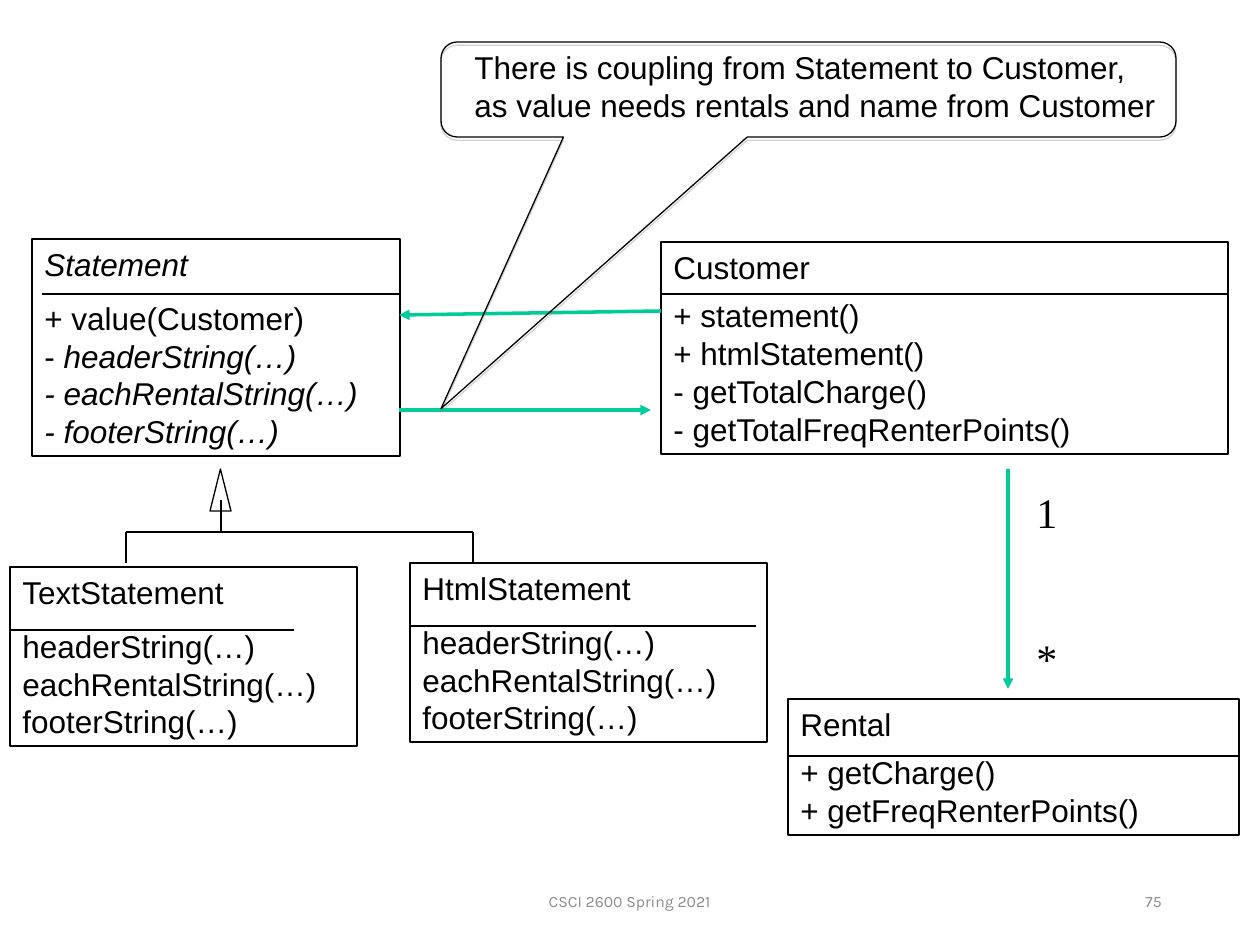
import pptx
import pptx.util
import pptx.dml.color
import pptx.enum.shapes
import pptx.enum.text
import pptx.oxml
import pptx.oxml.ns
from dataclasses import dataclass

SHAPE = pptx.enum.shapes.MSO_SHAPE
ALIGN = pptx.enum.text.PP_ALIGN
ANCHOR = pptx.enum.text.MSO_ANCHOR
NS = pptx.oxml.ns.nsdecls("a")
EMU_PER_PX = 914400 / 126


@dataclass(frozen=True)
class Theme:
    ink: str = "000000"
    association: str = "00CC99"
    shadow: str = "808080"
    muted: str = "8B8B8B"
    body_font: str = "Arial"
    count_font: str = "Times New Roman"
    footer_font: str = "Karla"
    body: int = 18
    count: int = 24
    footer: int = 9
    thin: float = 0.75
    thick: float = 2


THEME = Theme()


def px(*values):
    return [pptx.util.Emu(round(v * EMU_PER_PX)) for v in values]


def rgb(value):
    return pptx.dml.color.RGBColor.from_string(value)


def set_text(s, paragraphs, font=THEME.body_font, size=THEME.body, color=THEME.ink,
             align=ALIGN.LEFT, anchor=ANCHOR.TOP, before=0, wrap=True):
    """Each paragraph is a list of (text, italic) runs; a newline is a line break."""
    tf = s.text_frame
    tf.word_wrap = wrap
    tf.vertical_anchor = anchor
    for i, runs in enumerate(paragraphs):
        p = tf.add_paragraph() if i else tf.paragraphs[0]
        p.alignment = align
        p.space_before = pptx.util.Pt(before)
        for text, italic in runs:
            for n, line in enumerate(text.split("\n")):
                if n:
                    p.add_line_break()
                r = p.add_run()
                r.text = line
                r.font.name = font
                r.font.size = pptx.util.Pt(size)
                r.font.italic = italic
                r.font.color.rgb = rgb(color)


def add_text(slide, box, *lines, **fmt):
    s = slide.shapes.add_textbox(*px(*box))
    set_text(s, [[(line, False)] for line in lines], **fmt)


def add_outline(slide, kind, box):
    s = slide.shapes.add_shape(kind, *px(*box))
    s.shadow.inherit = False
    s.fill.background()
    s.line.color.rgb = rgb(THEME.ink)
    s.line.width = pptx.util.Pt(THEME.thin)
    return s


def add_line(slide, x1, y1, x2, y2, color=THEME.ink, width=THEME.thin):
    c = slide.shapes.add_connector(
        pptx.enum.shapes.MSO_CONNECTOR.STRAIGHT, *px(x1, y1, x2, y2))
    c.line.color.rgb = rgb(color)
    c.line.width = pptx.util.Pt(width)
    c._element.spPr.append(pptx.oxml.parse_xml(f"<a:effectLst {NS}/>"))
    return c


def add_association(slide, *ends):
    c = add_line(slide, *ends, color=THEME.association, width=THEME.thick)
    c.line._get_or_add_ln().append(
        pptx.oxml.parse_xml(f'<a:tailEnd {NS} type="triangle"/>'))


def add_class(slide, box, divider, name, members, before=9):
    """Draw a UML class; divider is its rule as (left, right, y)."""
    s = add_outline(slide, SHAPE.RECTANGLE, box)
    set_text(s, [[name], members], before=before)
    left, right, y = divider
    add_line(slide, left, y, right, y)


def add_inheritance(slide, x, top, bus_y, children, bottom):
    """Draw the hollow triangle at (x, top) and the tree down to the children."""
    add_outline(slide, SHAPE.FLOWCHART_EXTRACT, (x - 11, top, 21, 42))
    add_line(slide, x, top + 31, x, bus_y)
    add_line(slide, children[0], bus_y, children[-1], bus_y)
    for child in children:
        add_line(slide, child, bus_y, child, bottom)


def add_callout(slide, box):
    s = add_outline(slide, SHAPE.ROUNDED_RECTANGULAR_CALLOUT, box)
    for i, value in enumerate((-0.5, 3.36, 0.17)):
        s.adjustments[i] = value
    effects = s._element.spPr.find(pptx.oxml.ns.qn("a:effectLst"))
    effects.append(pptx.oxml.parse_xml(
        f'<a:outerShdw {NS} blurRad="0" dist="22860" dir="5400000" rotWithShape="0">'
        f'<a:srgbClr val="{THEME.shadow}"><a:alpha val="35000"/></a:srgbClr>'
        '</a:outerShdw>'))


def main():
    prs = pptx.Presentation()
    prs.slide_width, prs.slide_height = px(1260, 945)
    slide = prs.slides.add_slide(prs.slide_layouts[6])

    add_class(slide, (661, 242, 567, 212), (661, 1228, 294), ("Customer", False),
              [("+ statement()\n+ htmlStatement()\n- getTotalCharge()\n"
                "- getTotalFreqRenterPoints()", False)], before=6)
    add_class(slide, (788, 699, 451, 136), (788, 1239, 756), ("Rental", False),
              [("+ getCharge()\n+ getFreqRenterPoints()", False)], before=6)
    add_association(slide, 1008, 469, 1008, 689)
    for count, y in (("1", 480), ("*", 626)):
        add_text(slide, (1024, y, 45, 63), count, font=THEME.count_font,
                 size=THEME.count, wrap=False)

    add_class(slide, (32, 239, 368, 217), (42, 399, 294), ("Statement", True),
              [("+ value(Customer)\n- ", False),
               ("headerString(…)\n- eachRentalString(…)\n- footerString(…)", True)])
    overrides = [("headerString(…)\neachRentalString(…)\nfooterString(…)", False)]
    add_class(slide, (10, 567, 347, 179), (10, 294, 630),
              ("TextStatement", False), overrides)
    add_class(slide, (410, 563, 357, 179), (410, 756, 626),
              ("HtmlStatement", False), overrides)
    add_inheritance(slide, 221, 469, 532, (126, 473), 563)

    add_association(slide, 399, 410, 651, 410)
    add_association(slide, 661, 311, 399, 315)
    add_callout(slide, (441, 42, 735, 95))
    add_text(slide, (462, 42, 713, 88),
             "There is coupling from Statement to Customer,",
             "as value needs rentals and name from Customer", wrap=False)

    footer = dict(font=THEME.footer_font, size=THEME.footer, color=THEME.muted,
                  anchor=ANCHOR.MIDDLE)
    add_text(slide, (417, 876, 425, 50), "CSCI 2600 Spring 2021",
             align=ALIGN.CENTER, **footer)
    add_text(slide, (890, 876, 284, 50), "75", align=ALIGN.RIGHT, **footer)
    prs.save("out.pptx")


if __name__ == "__main__":
    main()
